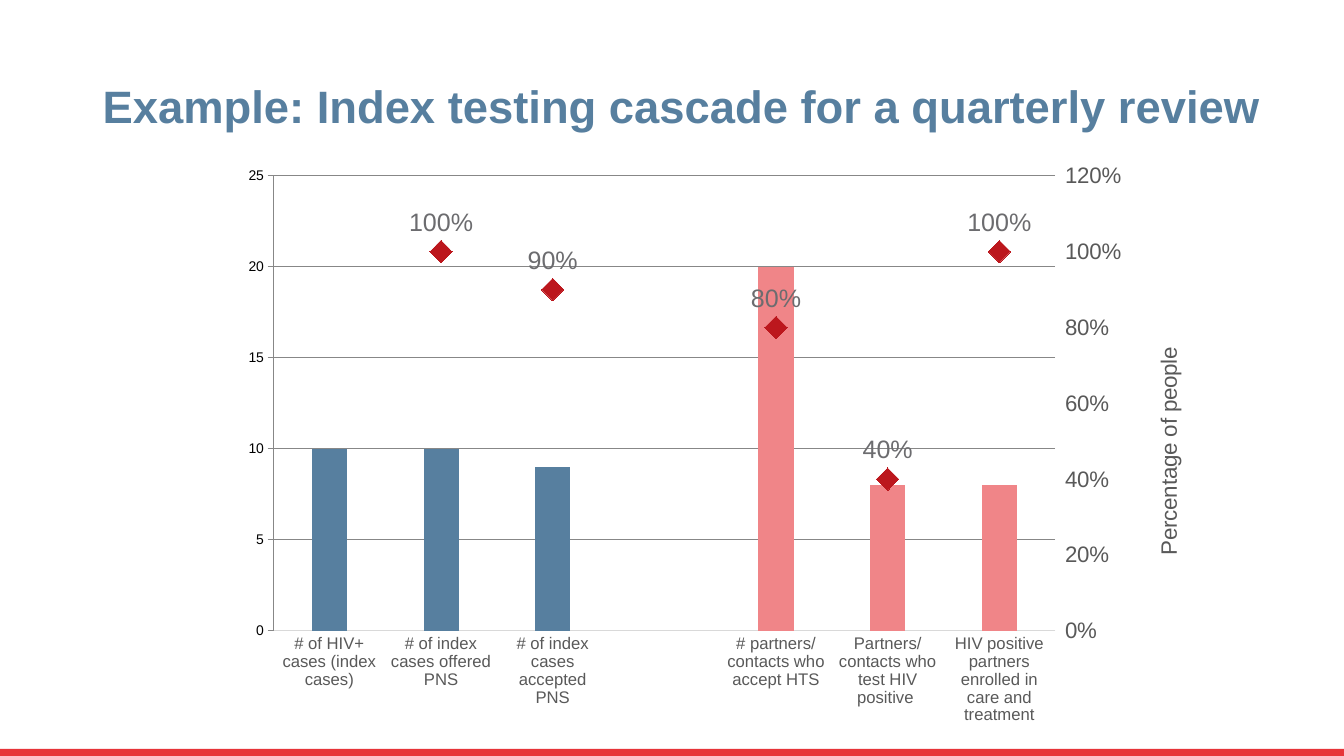
from copy import deepcopy
from dataclasses import dataclass

from pptx import Presentation
from pptx.chart.axis import CategoryAxis, ValueAxis
from pptx.chart.chart import Chart
from pptx.chart.data import CategoryChartData
from pptx.dml.color import RGBColor
from pptx.enum.chart import XL_CHART_TYPE, XL_LABEL_POSITION, XL_MARKER_STYLE, XL_TICK_MARK
from pptx.enum.shapes import MSO_SHAPE
from pptx.enum.text import MSO_ANCHOR
from pptx.oxml import parse_xml
from pptx.oxml.ns import nsdecls, qn
from pptx.slide import Slide
from pptx.util import Inches, Pt


@dataclass(frozen=True)
class Theme:
    font: str = "Arial"
    blue: str = "577F9F"
    pink: str = "F08588"
    marker: str = "BC171D"
    footer: str = "E73439"
    axis_text: str = "595959"
    label_text: str = "6C6C6F"
    grid: str = "D9D9D9"
    title_size: float = 32.4
    label_size: float = 18
    axis_size: float = 16
    category_size: float = 12


@dataclass(frozen=True)
class Scale:
    title: str
    title_x: float
    title_y: float
    maximum: float
    step: float
    number_format: str
    gridlines: bool
    tick_mark: XL_TICK_MARK


@dataclass(frozen=True)
class Stage:
    label: str
    people: int | None
    share: float | None
    is_partner: bool = False


THEME = Theme()
PEOPLE = Scale("Number of people", 0.02, 0.28, 25, 5, "General", True, XL_TICK_MARK.NONE)
PERCENT = Scale("Percentage of people", 0.97, 0.28, 1.2, 0.2, "0%", False, XL_TICK_MARK.OUTSIDE)
STAGES = [
    Stage("# of HIV+ cases (index cases)", 10, None),
    Stage("# of index cases offered PNS", 10, 1),
    Stage("# of index cases accepted PNS", 9, 0.9),
    Stage("", None, None),
    Stage("# partners/ contacts who accept HTS", 20, 0.8, True),
    Stage("Partners/ contacts who test HIV positive ", 8, 0.4, True),
    Stage("HIV positive partners enrolled in care and treatment", 8, 1, True),
]


def apply_format(target: object, values: dict) -> None:
    for name, value in values.items():
        setattr(target, name, value)


def style_font(font, size: float, color: str, bold: bool = False) -> None:
    apply_format(font, {"name": THEME.font, "size": Pt(size), "bold": bold})
    font.color.rgb = RGBColor.from_string(color)


def paint(fill, color: str) -> None:
    fill.solid()
    fill.fore_color.rgb = RGBColor.from_string(color)


def draw_grid_line(line) -> None:
    paint(line.fill, THEME.grid)
    line.width = Pt(0.75)


def manual_layout(target: str, **places: float):
    modes = "".join(f'<c:{name}Mode val="edge"/>' for name in "xy")
    values = "".join(f'<c:{name} val="{value}"/>' for name, value in places.items())
    return parse_xml(f'<c:layout {nsdecls("c")}><c:manualLayout>{target}{modes}{values}'
                     "</c:manualLayout></c:layout>")


def style_scale(axis: ValueAxis, scale: Scale) -> None:
    apply_format(axis, {
        "minimum_scale": 0, "maximum_scale": scale.maximum, "major_unit": scale.step,
        "has_major_gridlines": scale.gridlines, "major_tick_mark": scale.tick_mark,
        "minor_tick_mark": XL_TICK_MARK.NONE, "has_title": True,
    })
    if scale.gridlines:
        draw_grid_line(axis.major_gridlines.format.line)
    axis.format.line.fill.background()
    apply_format(axis.tick_labels, {"number_format": scale.number_format,
                                    "number_format_is_linked": False})
    style_font(axis.tick_labels.font, THEME.axis_size, THEME.axis_text)

    # Upright axis title at a fixed place
    frame = axis.axis_title.text_frame
    frame.text = scale.title
    style_font(frame.paragraphs[0].runs[0].font, THEME.axis_size, THEME.axis_text)
    title = axis.axis_title.element
    body = title.find(".//" + qn("a:bodyPr"))
    body.set("rot", "-5400000")
    body.set("vert", "horz")
    for layout in title.findall(qn("c:layout")):
        title.remove(layout)
    title.find(qn("c:tx")).addnext(manual_layout("", x=scale.title_x, y=scale.title_y))


def add_percent_axis(chart: Chart) -> ValueAxis:
    """Move the second series to a line plot on its own right-hand axis."""
    area = chart.element.find(".//" + qn("c:plotArea"))
    bars = area.find(qn("c:barChart"))
    categories, values = area.find(qn("c:catAx")), area.find(qn("c:valAx"))
    values.find(qn("c:crosses")).addnext(
        parse_xml(f'<c:crossBetween {nsdecls("c")} val="between"/>'))
    lines = parse_xml(
        f'<c:lineChart {nsdecls("c")}><c:grouping val="standard"/><c:varyColors val="0"/>'
        '<c:marker val="1"/><c:axId val="5001"/><c:axId val="5002"/></c:lineChart>')
    share = bars.findall(qn("c:ser"))[1]
    for flag in share.findall(qn("c:invertIfNegative")):
        share.remove(flag)
    lines.insert(2, share)
    bars.addnext(lines)

    # Paired axes, the category one hidden
    right, hidden = deepcopy(values), deepcopy(categories)
    for axis, own, other in ((right, "5002", "5001"), (hidden, "5001", "5002")):
        axis.find(qn("c:axId")).set("val", own)
        axis.find(qn("c:crossAx")).set("val", other)
    right.find(qn("c:axPos")).set("val", "r")
    right.find(qn("c:crosses")).set("val", "max")
    values.addnext(right)
    right.addnext(hidden)
    CategoryAxis(hidden).visible = False

    # Fixed inner plot area
    for layout in area.findall(qn("c:layout")):
        area.remove(layout)
    area.insert(0, manual_layout('<c:layoutTarget val="inner"/>',
                                 x=0.103, y=0.031, w=0.773, h=0.684))
    return ValueAxis(right)


def add_cascade(page: Slide) -> None:
    data = CategoryChartData()
    data.categories = [stage.label for stage in STAGES]
    data.add_series("Series 1", [stage.people for stage in STAGES])
    data.add_series("Series 2", [stage.share for stage in STAGES], "0%")
    chart = page.shapes.add_chart(XL_CHART_TYPE.COLUMN_CLUSTERED, Inches(1.68), Inches(1.54),
                                  Inches(10.1), Inches(6.6), data).chart
    apply_format(chart, {"has_legend": False, "has_title": False})
    style_font(chart.font, 10, "000000")
    percent_axis = add_percent_axis(chart)
    style_scale(chart.value_axis, PEOPLE)
    style_scale(percent_axis, PERCENT)
    axis = chart.category_axis
    apply_format(axis, {"major_tick_mark": XL_TICK_MARK.NONE,
                        "minor_tick_mark": XL_TICK_MARK.NONE})
    draw_grid_line(axis.format.line)
    style_font(axis.tick_labels.font, THEME.category_size, THEME.axis_text)

    # Columns
    bars, lines = chart.plots
    apply_format(bars, {"gap_width": 219, "overlap": -27, "vary_by_categories": False})
    people = bars.series[0]
    paint(people.format.fill, THEME.blue)
    for index, stage in enumerate(STAGES):
        if stage.is_partner:
            paint(people.points[index].format.fill, THEME.pink)

    # Percentage markers
    share = lines.series[0]
    share.smooth = False
    share.format.line.fill.background()
    apply_format(share.marker, {"style": XL_MARKER_STYLE.DIAMOND, "size": 16})
    paint(share.marker.format.fill, THEME.marker)
    paint(share.marker.format.line.fill, THEME.marker)
    apply_format(share.data_labels, {
        "show_value": True, "position": XL_LABEL_POSITION.ABOVE,
        "number_format": "0%", "number_format_is_linked": False,
    })
    style_font(share.data_labels.font, THEME.label_size, THEME.label_text)


def add_title(page: Slide, text: str) -> None:
    box = page.shapes.add_textbox(Inches(0.92), Inches(0.64), Inches(12.18), Inches(0.87))
    apply_format(box.text_frame, {"word_wrap": True, "vertical_anchor": MSO_ANCHOR.MIDDLE})
    para = box.text_frame.paragraphs[0]
    para.line_spacing = 0.9
    span = para.add_run()
    span.text = text
    style_font(span.font, THEME.title_size, THEME.blue, bold=True)


def add_footer(page: Slide) -> None:
    band = page.shapes.add_shape(MSO_SHAPE.RECTANGLE, 0, Inches(7.43), Inches(13.33), Inches(0.08))
    band.shadow.inherit = False
    paint(band.fill, THEME.footer)
    band.line.fill.background()


def main() -> None:
    deck = Presentation()
    apply_format(deck, {"slide_width": Inches(13.33), "slide_height": Inches(7.5)})
    page = deck.slides.add_slide(deck.slide_layouts[6])
    add_title(page, "Example: Index testing cascade for a quarterly review")
    add_cascade(page)
    add_footer(page)
    deck.save("out.pptx")


if __name__ == "__main__":
    main()
